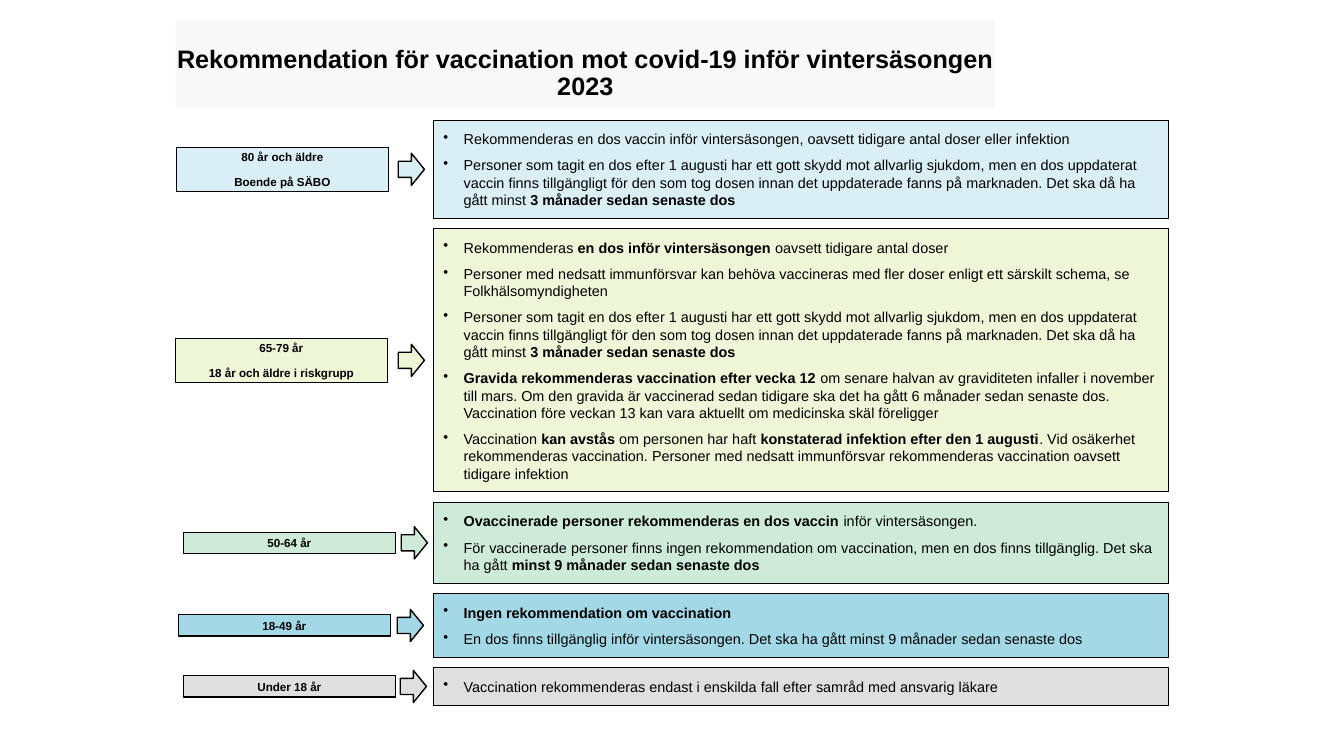
from pptx import Presentation
from pptx.dml.color import RGBColor
from pptx.enum.shapes import MSO_SHAPE as Shape
from pptx.enum.text import MSO_ANCHOR as Anchor, PP_ALIGN as Align
from pptx.oxml.ns import qn
from pptx.util import Inches, Pt
from lxml import etree

BLACK = RGBColor(0x00, 0x00, 0x00)
PALE = RGBColor(0xF8, 0xF8, 0xF8)
SKY = RGBColor(0xDA, 0xEF, 0xF5)
LIME = RGBColor(0xEF, 0xF5, 0xD7)
MINT = RGBColor(0xCD, 0xEB, 0xD8)
BLUE = RGBColor(0xA3, 0xD8, 0xE7)
GREY = RGBColor(0xDF, 0xDF, 0xDF)

deck = Presentation()
deck.slide_width = Inches(13.33)
deck.slide_height = Inches(7.5)
slide = deck.slides.add_slide(deck.slide_layouts[6])


def add_box(kind, left, top, width, height, fill, line=None):
    box = slide.shapes.add_shape(
        kind, Inches(left), Inches(top), Inches(width), Inches(height))
    box.shadow.inherit = False
    box.fill.solid()
    box.fill.fore_color.rgb = fill
    if line:
        box.line.color.rgb = BLACK
        box.line.width = Pt(line)
    else:
        box.line.fill.background()
    return box


def add_text(box, lines, size, pad=(0, 0), top=None, bold=False, bullet=False,
             before=0, after=0, spacing=None):
    """Write one paragraph per line; text between asterisks is bold."""
    frame = box.text_frame
    frame.word_wrap = True
    frame.vertical_anchor = Anchor.MIDDLE
    frame.margin_left = frame.margin_right = Inches(pad[0])
    frame.margin_top = frame.margin_bottom = Inches(pad[1])
    if top is not None:
        frame.margin_top = Inches(top)
    for i, line in enumerate(lines):
        para = frame.add_paragraph() if i else frame.paragraphs[0]
        para.alignment = Align.LEFT if bullet else Align.CENTER
        para.space_before = Pt(before if i else 0)
        para.space_after = Pt(after)
        if spacing:
            para.line_spacing = spacing
        if bullet:
            props = para._p.get_or_add_pPr()
            props.set("marL", str(Inches(0.2)))
            props.set("indent", str(-Inches(0.2)))
            etree.SubElement(props, qn("a:buChar")).set("char", "•")
        for j, part in enumerate(line.split("*")):
            if part:
                run = para.add_run()
                run.text = part
                run.font.name = "Arial"
                run.font.size = Pt(size)
                run.font.bold = bold or j % 2 == 1
                run.font.color.rgb = BLACK


title = add_box(Shape.RECTANGLE, 1.74, 0.2, 8.13, 0.87, PALE)
add_text(title,
         ["Rekommendation för vaccination mot covid-19 inför vintersäsongen 2023"],
         18, top=0.19, bold=True, spacing=0.9)

RECENT = (
    "Personer som tagit en dos efter 1 augusti har ett gott skydd mot allvarlig "
    "sjukdom, men en dos uppdaterat vaccin finns tillgängligt för den som tog "
    "dosen innan det uppdaterade fanns på marknaden. Det ska då ha gått minst "
    "*3 månader sedan senaste dos*")

# fill, body height, label left, arrow left, label lines, advice
groups = [
    (SKY, 0.98, 1.75, 3.95, ["80 år och äldre", "Boende på SÄBO"], [
        "Rekommenderas en dos vaccin inför vintersäsongen, oavsett tidigare "
        "antal doser eller infektion",
        RECENT]),
    (LIME, 2.61, 1.74, 3.95, ["65-79 år", "18 år och äldre i riskgrupp"], [
        "Rekommenderas *en dos inför vintersäsongen* oavsett tidigare antal doser",
        "Personer med nedsatt immunförsvar kan behöva vaccineras med fler doser "
        "enligt ett särskilt schema, se Folkhälsomyndigheten",
        RECENT,
        "*Gravida rekommenderas vaccination efter vecka 12 *om senare halvan av "
        "graviditeten infaller i november till mars. Om den gravida är vaccinerad "
        "sedan tidigare ska det ha gått 6 månader sedan senaste dos. Vaccination "
        "före veckan 13 kan vara aktuellt om medicinska skäl föreligger",
        "Vaccination *kan avstås* om personen har haft *konstaterad infektion "
        "efter den 1 augusti*. Vid osäkerhet rekommenderas vaccination. Personer "
        "med nedsatt immunförsvar rekommenderas vaccination oavsett tidigare "
        "infektion"]),
    (MINT, 0.81, 1.82, 3.98, ["50-64 år"], [
        "*Ovaccinerade personer rekommenderas en dos vaccin *inför vintersäsongen.",
        "För vaccinerade personer finns ingen rekommendation om vaccination, men "
        "en dos finns tillgänglig. Det ska ha gått "
        "*minst 9 månader sedan senaste dos*"]),
    (BLUE, 0.63, 1.77, 3.94, ["18-49 år"], [
        "*Ingen rekommendation om vaccination*",
        "En dos finns tillgänglig inför vintersäsongen. Det ska ha gått minst "
        "9 månader sedan senaste dos"]),
    (GREY, 0.38, 1.82, 3.97, ["Under 18 år"], [
        "Vaccination rekommenderas endast i enskilda fall efter samråd med "
        "ansvarig läkare"]),
]

top = 1.19
for fill, high, left, tip, ages, advice in groups:
    mid = top + high / 2
    body = add_box(Shape.RECTANGLE, 4.3, top, 7.29, high, fill, 0.5)
    add_text(body, advice, 10.3, pad=(0.1, 0.1), bullet=True, after=6.4)
    tall = 0.21 if len(ages) == 1 else 0.44
    label = add_box(Shape.RECTANGLE, left, mid - tall / 2, 2.1, tall, fill, 0.75)
    add_text(label, ages, 8.3, pad=(0.06, 0.03), bold=True, before=1.3, after=6.4)
    add_box(Shape.RIGHT_ARROW, tip, mid - 0.16, 0.26, 0.32, fill, 1)
    top += high + 0.1

deck.save("out.pptx")
